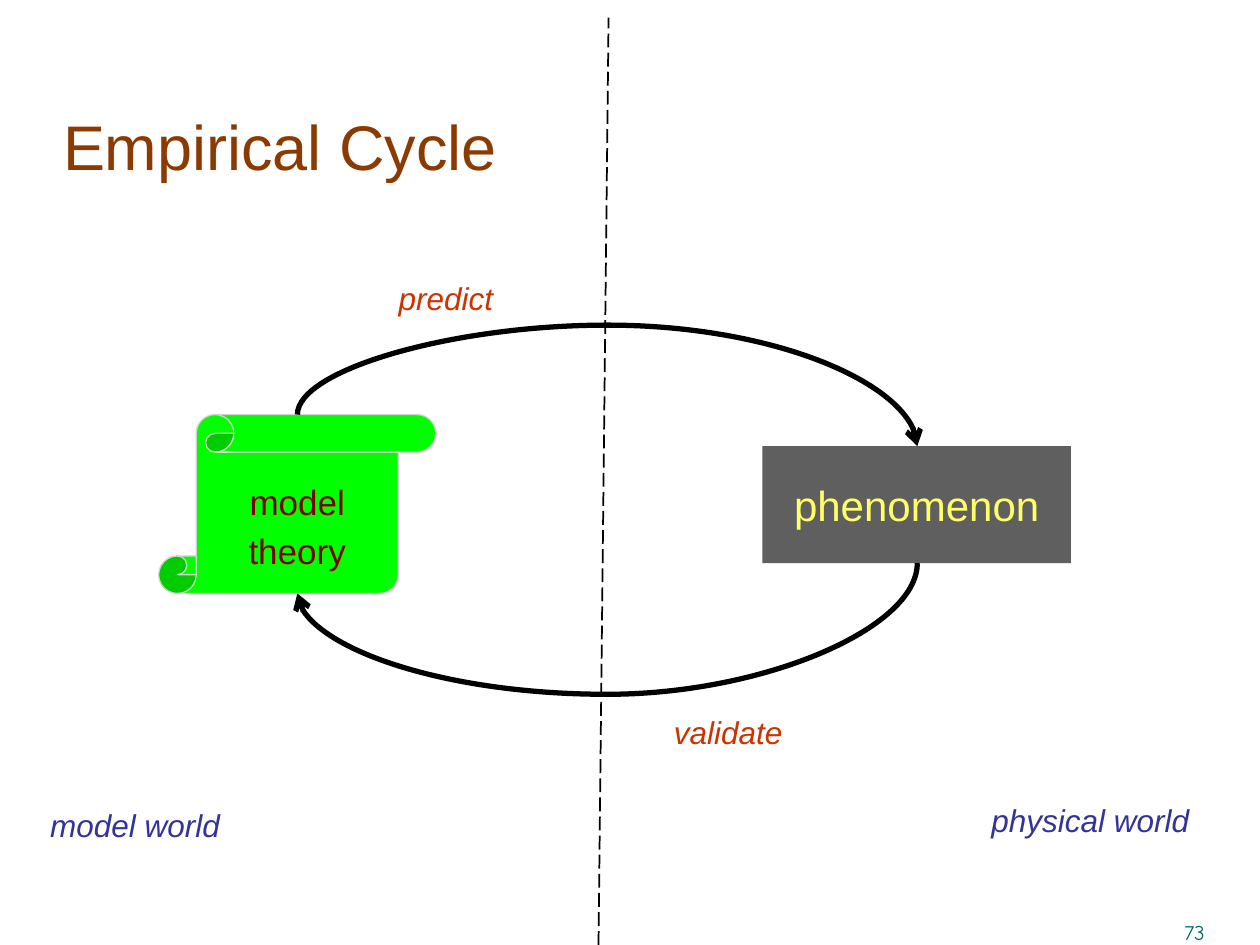
from dataclasses import dataclass
from typing import Optional

from pptx import Presentation
from pptx.dml.color import RGBColor
from pptx.enum.dml import MSO_LINE
from pptx.enum.shapes import MSO_CONNECTOR, MSO_SHAPE
from pptx.enum.text import MSO_ANCHOR, MSO_AUTO_SIZE, PP_ALIGN
from pptx.oxml.ns import qn
from pptx.oxml.xmlchemy import OxmlElement
from pptx.util import Inches, Pt

LEFT, CENTER, RIGHT = PP_ALIGN.LEFT, PP_ALIGN.CENTER, PP_ALIGN.RIGHT
TITLE_ONLY_LAYOUT = 5

BLACK = RGBColor(0x00, 0x00, 0x00)
BROWN = RGBColor(0x8B, 0x3A, 0x02)
TEAL = RGBColor(0x03, 0x6A, 0x66)
GREEN = RGBColor(0x00, 0xFF, 0x00)
SILVER = RGBColor(0xD4, 0xD2, 0xD0)
MAROON = RGBColor(0x80, 0x00, 0x00)
GRAY = RGBColor(0x5F, 0x5F, 0x5F)
YELLOW = RGBColor(0xFF, 0xFF, 0x66)
RED = RGBColor(0xCC, 0x33, 0x00)
INDIGO = RGBColor(0x33, 0x33, 0x99)


@dataclass
class Label:
    text: str
    left: float
    top: float
    width: float
    height: float
    color: RGBColor
    size: int = 18
    font: str = "Arial"
    italic: bool = True
    align: PP_ALIGN = LEFT
    wrap: bool = False
    hanging: bool = False


@dataclass
class Node:
    lines: list[str]
    preset: MSO_SHAPE
    left: float
    top: float
    width: float
    height: float
    fill: RGBColor
    color: RGBColor
    size: int
    outline: Optional[RGBColor] = None


@dataclass
class Arc:
    start: tuple[float, float]
    end: tuple[float, float]
    bend_y: float


LABELS = [
    Label("predict", 2.56, 2.2, 1.46, 0.37, RED, align=CENTER, hanging=True),
    Label("validate", 4.75, 5.64, 1.62, 0.37, RED, wrap=True, hanging=True),
    Label("model world", 0.3, 6.35, 1.56, 0.4, INDIGO),
    Label("physical world", 7.77, 6.31, 1.79, 0.4, INDIGO),
    Label("73", 8.74, 7.25, 0.92, 0.25, TEAL, 12, "Comic Neue", False, RIGHT, True),
]
MODEL = Node(["model", "theory"], MSO_SHAPE.VERTICAL_SCROLL,
             1.26, 3.29, 2.2, 1.42, GREEN, MAROON, 20, SILVER)
PHENOMENON = Node(["phenomenon"], MSO_SHAPE.RECTANGLE,
                  6.05, 3.54, 2.45, 0.93, GRAY, YELLOW, 24)
ARCS = [
    Arc((2.36, 3.29), (7.28, 3.54), 2.58),
    Arc((7.28, 4.47), (2.36, 4.71), 5.51),
]


def style_paragraph(paragraph, size: int, color: RGBColor, align: PP_ALIGN,
                    font: str = "Arial", italic: bool = False) -> None:
    paragraph.alignment = align
    paragraph.font.name = font
    paragraph.font.size = Pt(size)
    paragraph.font.italic = italic
    paragraph.font.color.rgb = color


def add_title(slide, text: str) -> None:
    title = slide.shapes.title
    title.left, title.top = Inches(0.5), Inches(0.92)
    title.width, title.height = Inches(9), Inches(0.67)
    frame = title.text_frame
    frame.text = text
    frame.word_wrap = False
    frame.auto_size = MSO_AUTO_SIZE.NONE
    frame.vertical_anchor = MSO_ANCHOR.TOP
    frame.margin_left = frame.margin_right = frame.margin_top = frame.margin_bottom = 0
    frame.paragraphs[0].line_spacing = 0.9
    style_paragraph(frame.paragraphs[0], 36, BROWN, LEFT)


def add_label(slide, label: Label) -> None:
    box = slide.shapes.add_textbox(Inches(label.left), Inches(label.top),
                                   Inches(label.width), Inches(label.height))
    frame = box.text_frame
    frame.text = label.text
    frame.word_wrap = label.wrap
    frame.auto_size = MSO_AUTO_SIZE.SHAPE_TO_FIT_TEXT
    paragraph = frame.paragraphs[0]
    if label.hanging:
        properties = paragraph._p.get_or_add_pPr()
        properties.set("marL", str(Inches(0.81)))
        properties.set("indent", str(Inches(-0.31)))
        paragraph.line_spacing = 0.9
    style_paragraph(paragraph, label.size, label.color, label.align,
                    label.font, label.italic)


def add_node(slide, node: Node):
    shape = slide.shapes.add_shape(node.preset, Inches(node.left), Inches(node.top),
                                   Inches(node.width), Inches(node.height))
    shape.shadow.inherit = False
    shape.fill.solid()
    shape.fill.fore_color.rgb = node.fill
    if node.outline is None:
        shape.line.fill.background()
    else:
        shape.line.color.rgb = node.outline
        shape.line.width = Pt(0.75)
    frame = shape.text_frame
    frame.text = "\n".join(node.lines)
    frame.word_wrap = False
    frame.vertical_anchor = MSO_ANCHOR.MIDDLE
    for paragraph in frame.paragraphs:
        style_paragraph(paragraph, node.size, node.color, CENTER)
    for paragraph in frame.paragraphs[1:]:
        paragraph.space_before = Pt(node.size * 0.2)
    return shape


def add_line(slide, kind: MSO_CONNECTOR, start: tuple[float, float],
             end: tuple[float, float], width: float):
    connector = slide.shapes.add_connector(kind, *map(Inches, start + end))
    connector.line.color.rgb = BLACK
    connector.line.width = Pt(width)
    connector._element.spPr.append(OxmlElement("a:effectLst"))
    return connector


def add_arc(slide, arc: Arc) -> None:
    (x1, y1), (x2, y2) = arc.start, arc.end
    # A vertical bend is a horizontal one turned a quarter about its centre
    center_x, center_y = (x1 + x2) / 2, (y1 + y2) / 2
    half_width, half_height = (y2 - y1) / 2, abs(x2 - x1) / 2
    rightward = x2 > x1
    side = half_width if rightward else -half_width
    connector = add_line(slide, MSO_CONNECTOR.CURVE,
                         (center_x + side, center_y - half_height),
                         (center_x - side, center_y + half_height), 3)
    properties = connector._element.spPr
    properties.find(qn("a:xfrm")).set("rot", str((270 if rightward else 90) * 60000))

    guide = OxmlElement("a:gd")
    guide.set("name", "adj1")
    guide.set("fmla", f"val {round((arc.bend_y - y1) / (y2 - y1) * 100000)}")
    properties.find(qn("a:prstGeom")).get_or_add_avLst().append(guide)

    arrowhead = OxmlElement("a:tailEnd")
    arrowhead.set("type", "arrow")
    properties.find(qn("a:ln")).append(arrowhead)


def main() -> None:
    presentation = Presentation()
    presentation.slide_width, presentation.slide_height = Inches(10), Inches(7.5)
    slide = presentation.slides.add_slide(presentation.slide_layouts[TITLE_ONLY_LAYOUT])
    add_title(slide, "Empirical Cycle")

    # The two sides of the cycle
    scroll = add_node(slide, MODEL)
    scroll.adjustments[0] = 0.21
    scroll.text_frame.paragraphs[0].line_spacing = 1.6
    add_node(slide, PHENOMENON)

    # Arrows between them, and the border between the worlds
    for arc in ARCS:
        add_arc(slide, arc)
    border = add_line(slide, MSO_CONNECTOR.STRAIGHT, (4.75, 7.5), (4.83, 0.14), 1)
    border.line.dash_style = MSO_LINE.LONG_DASH

    for label in LABELS:
        add_label(slide, label)
    presentation.save("out.pptx")


if __name__ == "__main__":
    main()
